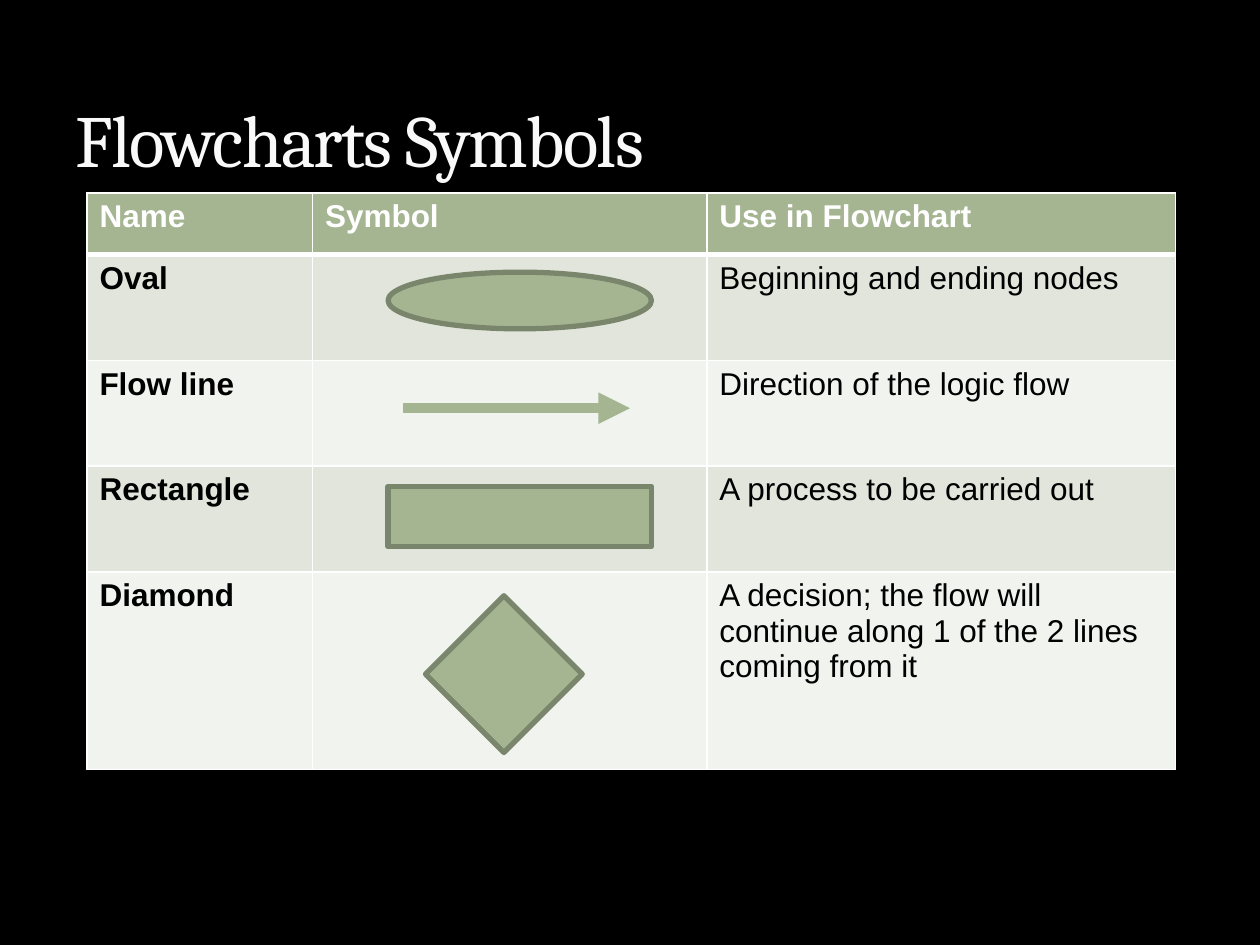
from dataclasses import dataclass

import pptx
import pptx.dml.color
import pptx.enum.shapes
import pptx.enum.text
import pptx.oxml
import pptx.oxml.ns
import pptx.util
from pptx.util import Inches, Pt

GREEN = "A5B592"
DARK_GREEN = "7A866C"
WHITE = "FFFFFF"
BLACK = "000000"
BAND_FILLS = ("E1E5DC", "F0F3EE")
COLUMN_WIDTHS = (1.79, 3.13, 3.72)
ROW_HEIGHTS = (0.49, 0.84, 0.84, 0.84, 1.57)
TABLE_ROWS = (
    ("Name", "Symbol", "Use in Flowchart"),
    ("Oval", "", "Beginning and ending nodes"),
    ("Flow line", "", "Direction of the logic flow"),
    ("Rectangle", "", "A process to be carried out"),
    ("Diamond", "", "A decision; the flow will continue along 1 of the 2 lines coming from it"),
)


@dataclass
class Symbol:
    preset: pptx.enum.shapes.MSO_SHAPE
    left: float
    top: float
    width: float
    height: float
    rotation: float = 0


SYMBOLS = (
    Symbol(pptx.enum.shapes.MSO_SHAPE.OVAL, 3.08, 2.16, 2.09, 0.45),
    Symbol(pptx.enum.shapes.MSO_SHAPE.RECTANGLE, 3.08, 3.86, 2.09, 0.48),
    Symbol(pptx.enum.shapes.MSO_SHAPE.RECTANGLE, 3.56, 4.91, 0.88, 0.88, 315),
)


def color(value: str) -> pptx.dml.color.RGBColor:
    return pptx.dml.color.RGBColor.from_string(value)


def add_title(slide) -> None:
    title = slide.shapes.title
    title.left, title.top = Inches(0.5), Inches(0.17)
    title.width, title.height = Inches(9), Inches(1.33)
    title.text_frame.text = "Flowcharts Symbols"
    title.text_frame.vertical_anchor = pptx.enum.text.MSO_ANCHOR.BOTTOM
    paragraph = title.text_frame.paragraphs[0]
    paragraph.alignment = pptx.enum.text.PP_ALIGN.LEFT
    run = paragraph.runs[0]
    run.font.name = "Cambria"
    run.font.size = Pt(42)
    run.font.color.rgb = color("F9F9F9")
    run.font._element.set("spc", "-100")


def set_borders(cell, top: float, bottom: float) -> None:
    properties = cell._tc.get_or_add_tcPr()
    widths = {"lnL": 1, "lnR": 1, "lnT": top, "lnB": bottom}
    for index, (tag, width) in enumerate(widths.items()):
        border = pptx.oxml.parse_xml(
            f'<a:{tag} {pptx.oxml.ns.nsdecls("a")} w="{Pt(width)}">'
            f'<a:solidFill><a:srgbClr val="{WHITE}"/></a:solidFill></a:{tag}>'
        )
        properties.insert(index, border)


def fill_cell(cell, text: str, row: int, column: int) -> None:
    header = row == 0
    cell.fill.solid()
    cell.fill.fore_color.rgb = color(GREEN if header else BAND_FILLS[(row - 1) % 2])
    set_borders(cell, 3 if row == 1 else 1, 3 if header else 1)
    cell.text_frame.text = text
    font = cell.text_frame.paragraphs[0].font
    font.name = "Arial"
    font.size = Pt(18)
    font.bold = header or column == 0
    font.color.rgb = color(WHITE if header else BLACK)
    for run in cell.text_frame.paragraphs[0].runs:
        run.font.name = "Arial"
        run.font.size = Pt(18)
        run.font.bold = header or column == 0
        run.font.color.rgb = color(WHITE if header else BLACK)


def add_symbol_table(slide) -> None:
    table = slide.shapes.add_table(
        len(ROW_HEIGHTS), len(COLUMN_WIDTHS), Inches(0.69), Inches(1.53),
        Inches(sum(COLUMN_WIDTHS)), Inches(sum(ROW_HEIGHTS)),
    ).table
    for column, width in zip(table.columns, COLUMN_WIDTHS):
        column.width = Inches(width)
    for row, height in zip(table.rows, ROW_HEIGHTS):
        row.height = Inches(height)
    for row, texts in enumerate(TABLE_ROWS):
        for column, text in enumerate(texts):
            fill_cell(table.cell(row, column), text, row, column)


def add_symbol(slide, symbol: Symbol) -> None:
    shape = slide.shapes.add_shape(
        symbol.preset, Inches(symbol.left), Inches(symbol.top),
        Inches(symbol.width), Inches(symbol.height),
    )
    shape.rotation = symbol.rotation
    shape.shadow.inherit = False
    shape.fill.solid()
    shape.fill.fore_color.rgb = color(GREEN)
    shape.line.color.rgb = color(DARK_GREEN)
    shape.line.width = Pt(3)


def add_flow_line(slide) -> None:
    connector = slide.shapes.add_connector(
        pptx.enum.shapes.MSO_CONNECTOR.STRAIGHT,
        Inches(3.2), Inches(3.24), Inches(5), Inches(3.24),
    )
    connector.line.color.rgb = color(GREEN)
    connector.line.width = Pt(6)
    namespace = pptx.oxml.ns.nsdecls("a")
    connector.line._get_or_add_ln().append(
        pptx.oxml.parse_xml(f'<a:tailEnd {namespace} type="triangle"/>')
    )
    connector._element.spPr.append(pptx.oxml.parse_xml(f"<a:effectLst {namespace}/>"))


def main() -> None:
    presentation = pptx.Presentation()
    presentation.slide_width = Inches(10)
    presentation.slide_height = Inches(7.5)
    slide = presentation.slides.add_slide(presentation.slide_layouts[5])
    slide.background.fill.solid()
    slide.background.fill.fore_color.rgb = color(BLACK)
    add_title(slide)
    add_symbol_table(slide)
    for symbol in SYMBOLS:
        add_symbol(slide, symbol)
    add_flow_line(slide)
    presentation.save("out.pptx")


if __name__ == "__main__":
    main()
